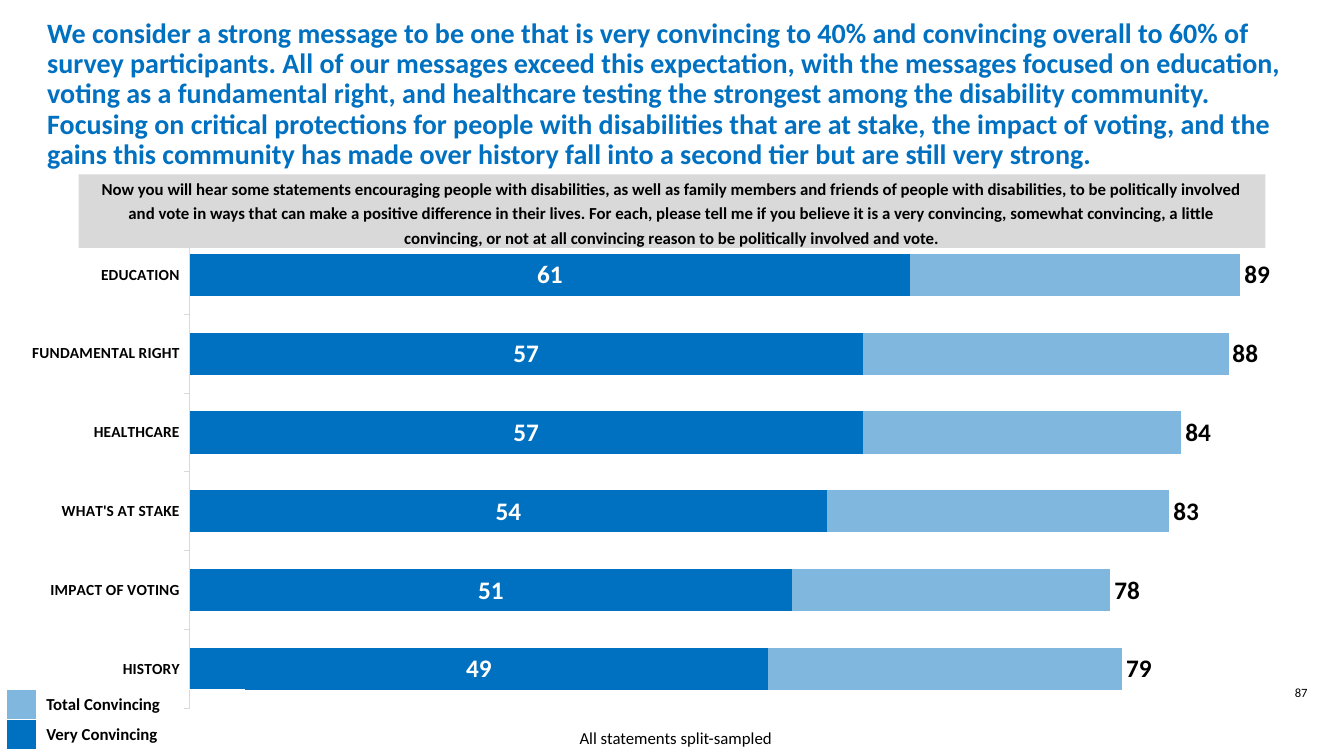
from lxml import etree
from pptx import Presentation
from pptx.chart.data import CategoryChartData
from pptx.dml.color import RGBColor
from pptx.enum.chart import XL_CHART_TYPE, XL_LABEL_POSITION, XL_TICK_LABEL_POSITION, XL_TICK_MARK
from pptx.enum.shapes import MSO_SHAPE
from pptx.enum.text import MSO_ANCHOR, PP_ALIGN
from pptx.oxml import parse_xml
from pptx.oxml.ns import nsdecls, qn
from pptx.util import Inches, Pt

BAR_STACKED = XL_CHART_TYPE.BAR_STACKED
CENTER_LABEL, INSIDE_BASE = XL_LABEL_POSITION.CENTER, XL_LABEL_POSITION.INSIDE_BASE
LOW = XL_TICK_LABEL_POSITION.LOW
OUTSIDE, NO_TICK = XL_TICK_MARK.OUTSIDE, XL_TICK_MARK.NONE
RECTANGLE = MSO_SHAPE.RECTANGLE
TOP, MIDDLE = MSO_ANCHOR.TOP, MSO_ANCHOR.MIDDLE
LEFT, CENTER = PP_ALIGN.LEFT, PP_ALIGN.CENTER

FONT = "Calibri"
BLUE = RGBColor(0x00, 0x70, 0xC0)
LIGHT_BLUE = RGBColor(0x7F, 0xB7, 0xDF)
GRAY = RGBColor(0xD9, 0xD9, 0xD9)
BLACK = RGBColor(0, 0, 0)
WHITE = RGBColor(0xFF, 0xFF, 0xFF)

TITLE = (
    "We consider a strong message to be one that is very convincing to 40% and convincing overall "
    "to 60% of survey participants. All of our messages exceed this expectation, with the messages "
    "focused on education, voting as a fundamental right, and healthcare testing the strongest among "
    "the disability community. Focusing on critical protections for people with disabilities that are "
    "at stake, the impact of voting, and the gains this community has made over history fall into a "
    "second tier but are still very strong."
)
QUESTION = (
    "Now you will hear some statements encouraging people with disabilities, as well as family members "
    "and friends of people with disabilities, to be politically involved and vote in ways that can make "
    "a positive difference in their lives. For each, please tell me if you believe it is a very "
    "convincing, somewhat convincing, a little convincing, or not at all convincing reason to be "
    "politically involved and vote."
)
MESSAGES = [
    ("HISTORY", 49, 79),
    ("IMPACT OF VOTING", 51, 78),
    ("WHAT'S AT STAKE", 54, 83),
    ("HEALTHCARE", 57, 84),
    ("FUNDAMENTAL RIGHT", 57, 88),
    ("EDUCATION", 61, 89),
]
LEGEND = [("Total Convincing", LIGHT_BLUE), ("Very Convincing", BLUE)]


def style_font(font, size, color=BLACK, bold=False):
    font.name = FONT
    font.size = Pt(size)
    font.bold = bold
    font.color.rgb = color


def write(tf, text, size, color=BLACK, bold=False, align=LEFT, anchor=TOP, spacing=None):
    tf.word_wrap = True
    tf.vertical_anchor = anchor
    p = tf.paragraphs[0]
    p.alignment = align
    if spacing:
        p.line_spacing = spacing
    r = p.add_run()
    r.text = text
    style_font(r.font, size, color, bold)


def add_text(s, box, text, size, **style):
    sp = s.shapes.add_textbox(*map(Inches, box))
    write(sp.text_frame, text, size, **style)


def add_question(s, box):
    sp = s.shapes.add_shape(RECTANGLE, *map(Inches, box))
    sp.shadow.inherit = False
    sp.fill.solid()
    sp.fill.fore_color.rgb = GRAY
    sp.line.fill.background()
    write(sp.text_frame, QUESTION, 12, bold=True, align=CENTER, anchor=MIDDLE, spacing=1.2)


def label_series(series, position, color):
    labels = series.data_labels
    labels.show_value = True
    labels.position = position
    style_font(labels.font, 18, color, True)


def add_message_chart(s, box):
    data = CategoryChartData()
    data.categories = [name for name, _, _ in MESSAGES]
    data.add_series("Series 1", [very for _, very, _ in MESSAGES])
    data.add_series("Series 2", [total - very for _, very, total in MESSAGES])
    data.add_series("Series 3", [total for _, _, total in MESSAGES])
    chart = s.shapes.add_chart(BAR_STACKED, *map(Inches, box), data).chart
    chart.has_legend = False
    chart.has_title = False
    style_font(chart.font, 10)

    plot = chart.plots[0]
    plot.gap_width = 86
    plot.overlap = 100
    plot.vary_by_categories = False
    very, rest, total = plot.series
    for series, color in ((very, BLUE), (rest, LIGHT_BLUE)):
        series.format.fill.solid()
        series.format.fill.fore_color.rgb = color
    total.format.fill.background()
    label_series(very, CENTER_LABEL, WHITE)
    label_series(total, INSIDE_BASE, BLACK)

    axis = chart.category_axis
    axis.major_tick_mark = OUTSIDE
    axis.minor_tick_mark = NO_TICK
    axis.tick_label_position = LOW
    axis.format.line.color.rgb = GRAY
    axis.format.line.width = Pt(0.75)
    style_font(axis.tick_labels.font, 11, bold=True)
    values = chart.value_axis
    values.minimum_scale = 0
    values.maximum_scale = 95
    values.has_major_gridlines = False
    values.visible = False

    area = chart.element.find(".//" + qn("c:plotArea"))
    for old in area.findall(qn("c:layout")):
        area.remove(old)
    area.insert(0, parse_xml(
        f'<c:layout {nsdecls("c")}><c:manualLayout><c:layoutTarget val="inner"/>'
        '<c:xMode val="edge"/><c:yMode val="edge"/><c:x val="0.138"/><c:y val="0.02"/>'
        '<c:w val="0.842"/><c:h val="0.961"/></c:manualLayout></c:layout>'))


def add_borders(cell):
    props = cell._tc.get_or_add_tcPr()
    for i, side in enumerate(("lnL", "lnR", "lnT", "lnB")):
        props.insert(i, parse_xml(
            f'<a:{side} {nsdecls("a")} w="12700"><a:solidFill>'
            f'<a:srgbClr val="{WHITE}"/></a:solidFill></a:{side}>'))


def add_legend(s, box):
    table = s.shapes.add_table(len(LEGEND), 2, *map(Inches, box)).table
    table.first_row = False
    table.horz_banding = False
    swatch_width = 0.3
    table.columns[0].width = Inches(swatch_width)
    table.columns[1].width = Inches(box[2] - swatch_width)
    for i, (name, color) in enumerate(LEGEND):
        swatch, label = table.cell(i, 0), table.cell(i, 1)
        swatch.fill.solid()
        swatch.fill.fore_color.rgb = color
        swatch.margin_top = swatch.margin_bottom = 0
        end = etree.SubElement(swatch.text_frame.paragraphs[0]._p, qn("a:endParaRPr"))
        end.set("sz", "1200")
        label.fill.background()
        write(label.text_frame, name, 12, bold=True)
        add_borders(swatch)
        add_borders(label)


def main():
    prs = Presentation()
    prs.slide_width, prs.slide_height = Inches(13.33), Inches(7.5)
    s = prs.slides.add_slide(prs.slide_layouts[6])
    add_text(s, (12.53, 6.75, 0.75, 0.33), "87", 9, align=CENTER)
    add_text(s, (5.65, 7.17, 2.13, 0.3), "All statements split-sampled", 12)
    add_message_chart(s, (0.06, 2.24, 13.21, 4.88))
    add_legend(s, (0.06, 6.84, 2.36, 0.6))
    add_question(s, (0.78, 1.73, 11.77, 0.73))
    add_text(s, (0.37, 0.22, 12.6, 1.44), TITLE, 20, color=BLUE, bold=True,
             anchor=MIDDLE, spacing=0.9)
    prs.save("out.pptx")


if __name__ == "__main__":
    main()
